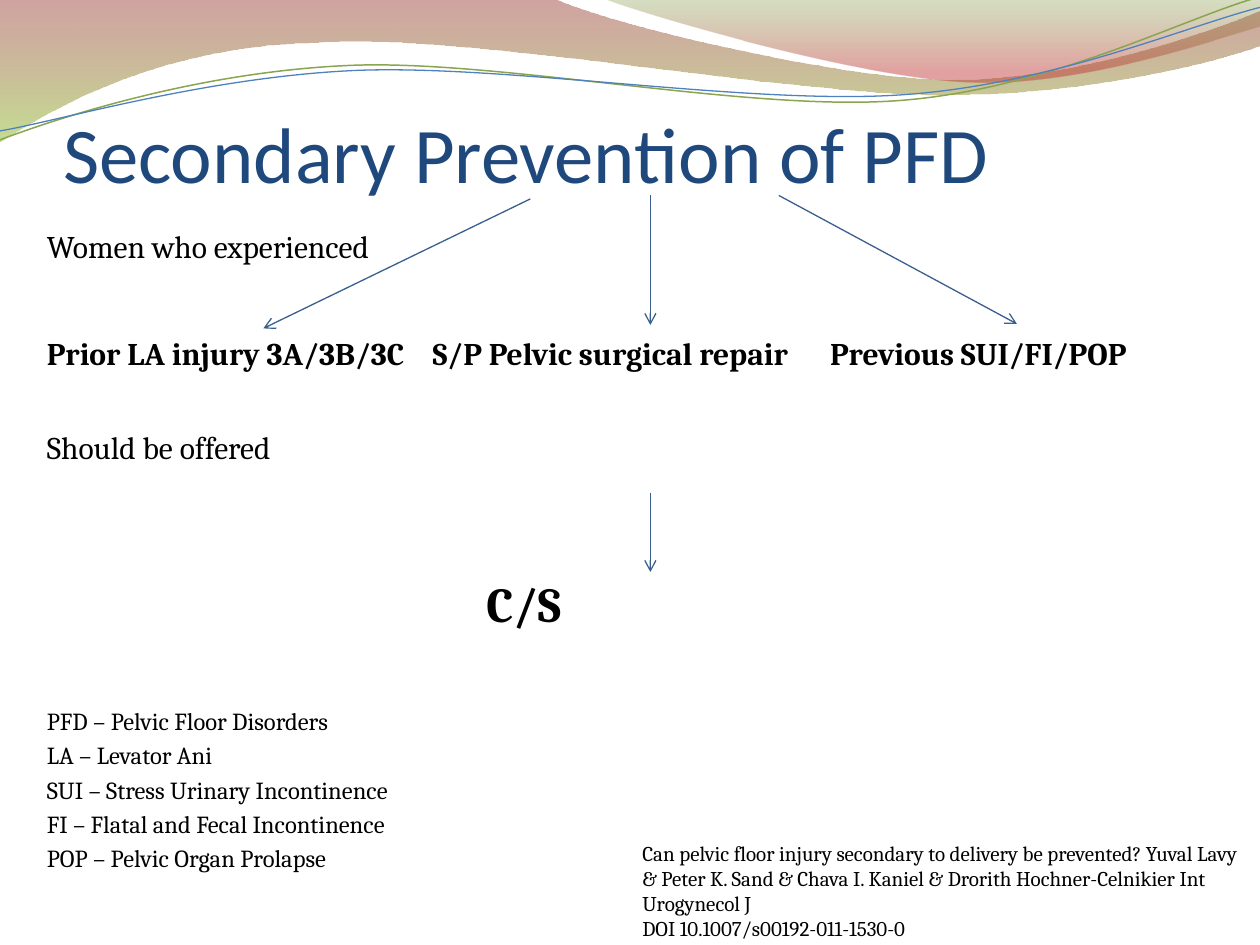
from lxml import etree
from pptx import Presentation, util as u
from pptx.dml.color import RGBColor
from pptx.enum import shapes, text
from pptx.oxml import ns

NAVY = RGBColor(0x1F, 0x49, 0x7D)
BLACK = RGBColor(0, 0, 0)
STEEL = RGBColor(0x39, 0x5F, 0x8D)
BLUE = RGBColor(0x4F, 0x81, 0xBD)
OLIVE = RGBColor(0x89, 0xA5, 0x4F)
RUST = RGBColor(0x97, 0x33, 0x30)
LIME = RGBColor(0x95, 0xC2, 0x38)
MOSS = RGBColor(0x76, 0x95, 0x37)
RED = RGBColor(0xBE, 0x33, 0x30)

BANDS = [
    ([(0, 0), (11.18, -0.02), (12.09, 0.43, 16.87, 1.6, 19.25, 1.6),
      (21.67, 1.6, 24.33, 0.66, 25.4, 0.23), (25.43, 0.91),
      (24.97, 1.12, 22.1, 1.93, 18.95, 1.91), (15.8, 1.91, 9.7, 0.71, 6.53, 0.86),
      (3.28, 0.91, 1.17, 2.11, -0.03, 2.87)],
     [(0, RUST, 45), (1, LIME, 55)]),
    ([(12.17, -0.03), (12.93, 0.28, 17.32, 1.57, 19.53, 1.65),
      (21.74, 1.75, 24.41, 0.81, 25.4, 0.53), (25.4, 0)],
     [(0, MOSS, 30), (0.8, RED, 45)]),
]
CURVES = [
    ([(0, 2.82), (1.22, 2.36, 4.01, 1.45, 7.04, 1.32),
      (10.03, 1.19, 15.06, 2.26, 18.11, 2.03), (21.16, 1.8, 23.83, 0.38, 25.35, -0.05)],
     OLIVE, 0.85),
    ([(0, 2.64), (1.19, 2.44, 4.17, 1.55, 7.19, 1.42),
      (10.24, 1.3, 15.16, 2.13, 18.21, 1.91), (21.23, 1.7, 23.9, 0.53, 25.4, 0.15)],
     BLUE, 0.75),
]
ARROWS = [(10.69, 4.01, 5.31, 6.62), (13.11, 3.94, 13.11, 6.55),
          (15.7, 3.94, 20.5, 6.53), (13.11, 9.93, 13.11, 11.53)]
CASES = ["Prior LA injury 3A/3B/3C", "S/P Pelvic surgical repair", "Previous SUI/FI/POP"]
GAPS = (12, 20)
ROWS = [
    (["Women who experienced"], 18, False, 0, 0),
    (CASES, 18, True, 39.4, 0),
    (["Should be offered"], 18, False, 32.1, 0),
    (["C/S"], 28, True, 61.9, 8.86),
    (["PFD – Pelvic Floor Disorders"], 14, False, 41.6, 0),
    (["LA – Levator Ani"], 14, False, 2.9, 0),
    (["SUI – Stress Urinary Incontinence"], 14, False, 2.9, 0),
    (["FI – Flatal and Fecal Incontinence"], 14, False, 2.9, 0),
    (["POP – Pelvic Organ Prolapse"], 14, False, 2.9, 0),
]
CITE = [
    "Can pelvic floor injury secondary to delivery be prevented? Yuval Lavy "
    "& Peter K. Sand & Chava I. Kaniel & Drorith Hochner-Celnikier Int Urogynecol J",
    "DOI 10.1007/s00192-011-1530-0",
]


def sub(node, tag, **attrs):
    return etree.SubElement(node, ns.qn(tag), attrs)


class Deck:
    """Holds the slide and the style of its elements."""

    font = "Cambria"

    def __init__(self):
        self.prs = Presentation()
        self.prs.slide_width, self.prs.slide_height = u.Cm(25.4), u.Cm(19.05)
        self.slide = self.prs.slides.add_slide(self.prs.slide_layouts[1])
        self.shapes = self.slide.shapes

    def place(self, shape, box):
        shape.left, shape.top, shape.width, shape.height = map(u.Cm, box)
        shape.text_frame.word_wrap = True
        shape.text_frame.auto_size = text.MSO_AUTO_SIZE.NONE
        return shape.text_frame

    def run(self, para, words, size, color=BLACK, bold=False, font=None):
        run = para.add_run()
        run.text = words
        run.font.name, run.font.size = font or self.font, u.Pt(size)
        run.font.bold, run.font.color.rgb = bold, color
        return run

    def outline(self, path, close):
        pts = [(u.Cm(seg[i]), u.Cm(seg[i + 1])) for seg in path for i in range(0, len(seg), 2)]
        pen = self.shapes.build_freeform(*pts[0], scale=1.0)
        pen.add_line_segments(pts[1:], close=close)
        shape = pen.convert_to_shape()
        shape.shadow.inherit = False
        lines = iter(list(shape._element.iter(ns.qn("a:lnTo"))))
        for seg in path[1:]:
            line = next(lines)
            if len(seg) == 6:
                bend = etree.Element(ns.qn("a:cubicBezTo"))
                line.addprevious(bend)
                for part in (line, next(lines), next(lines)):
                    bend.append(part[0])
                    part.getparent().remove(part)
        return shape

    def band(self, path, stops):
        shape = self.outline(path, True)
        shape.line.fill.background()
        shape.fill.gradient()
        shape.fill.gradient_angle = 270
        for stop, (pos, color, alpha) in zip(shape.fill.gradient_stops, stops):
            stop.position, stop.color.rgb = pos, color
        for node, item in zip(shape._element.iter(ns.qn("a:srgbClr")), stops):
            sub(node, "a:alpha", val=str(item[2] * 1000))

    def curve(self, path, color, width):
        shape = self.outline(path, False)
        shape.fill.background()
        shape.line.color.rgb, shape.line.width = color, u.Pt(width)

    def title(self, words, box):
        self.shapes._spTree.append(self.shapes.title._element)
        frame = self.place(self.shapes.title, box)
        frame.margin_left = frame.margin_right = frame.margin_bottom = 0
        frame.vertical_anchor = text.MSO_ANCHOR.BOTTOM
        para = frame.paragraphs[0]
        para.alignment = text.PP_ALIGN.LEFT
        self.run(para, words, 45, NAVY, font="Calibri")

    def body(self, rows, box):
        hold = self.slide.placeholders[1]
        self.shapes._spTree.append(hold._element)
        frame = self.place(hold, box)
        for i, (parts, size, bold, above, inset) in enumerate(rows):
            para = frame.add_paragraph() if i else frame.paragraphs[0]
            para.space_before = u.Pt(above)
            props = para._p.get_or_add_pPr()
            props.set("marL", str(u.Cm(inset)))
            props.set("indent", "0")
            sub(props, "a:buNone")
            self.run(para, parts[0], size, bold=bold)
            for gap, words in zip(GAPS, parts[1:]):
                space = self.run(para, " ", size, bold=bold)
                space.font._element.set("spc", str(gap * 100))
                self.run(para, words, size, bold=bold)

    def arrow(self, *ends):
        line = self.shapes.add_connector(shapes.MSO_CONNECTOR.STRAIGHT, *map(u.Cm, ends))
        line.line.color.rgb, line.line.width = STEEL, u.Pt(0.75)
        sub(line.line._get_or_add_ln(), "a:tailEnd", type="arrow")
        sub(line._element.spPr, "a:effectLst")

    def note(self, lines, box):
        frame = self.place(self.shapes.add_textbox(0, 0, 0, 0), box)
        for i, words in enumerate(lines):
            para = frame.add_paragraph() if i else frame.paragraphs[0]
            self.run(para, words, 12)


def main():
    deck = Deck()
    for item in BANDS:
        deck.band(*item)
    for item in CURVES:
        deck.curve(*item)
    deck.title("Secondary Prevention of PFD", (1.27, 1.96, 22.86, 2.06))
    deck.body(ROWS, (0.69, 4.45, 24.2, 14.27))
    for ends in ARROWS:
        deck.arrow(*ends)
    deck.note(CITE, (12.7, 16.81, 12.7, 2.31))
    deck.prs.save("out.pptx")


if __name__ == "__main__":
    main()
